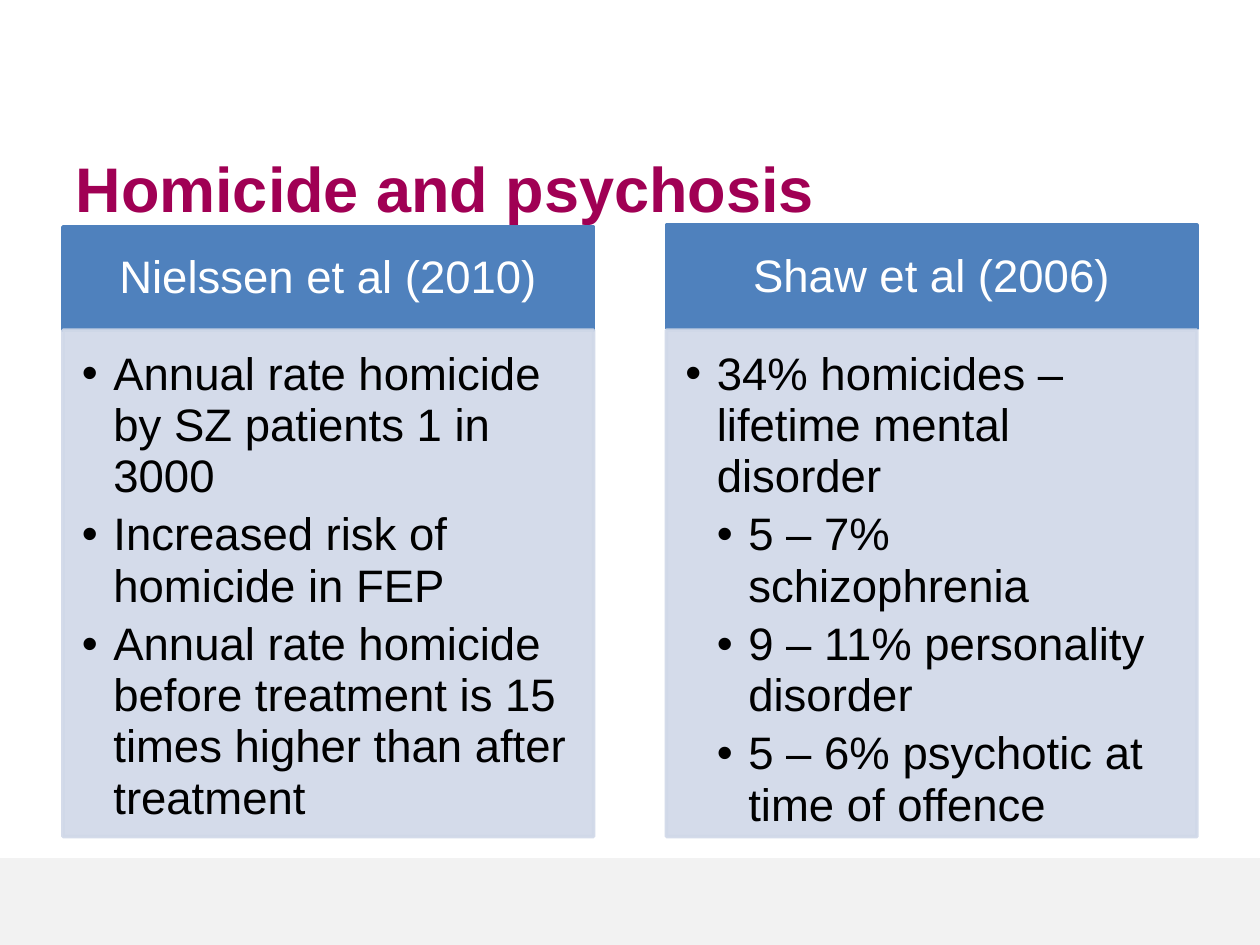
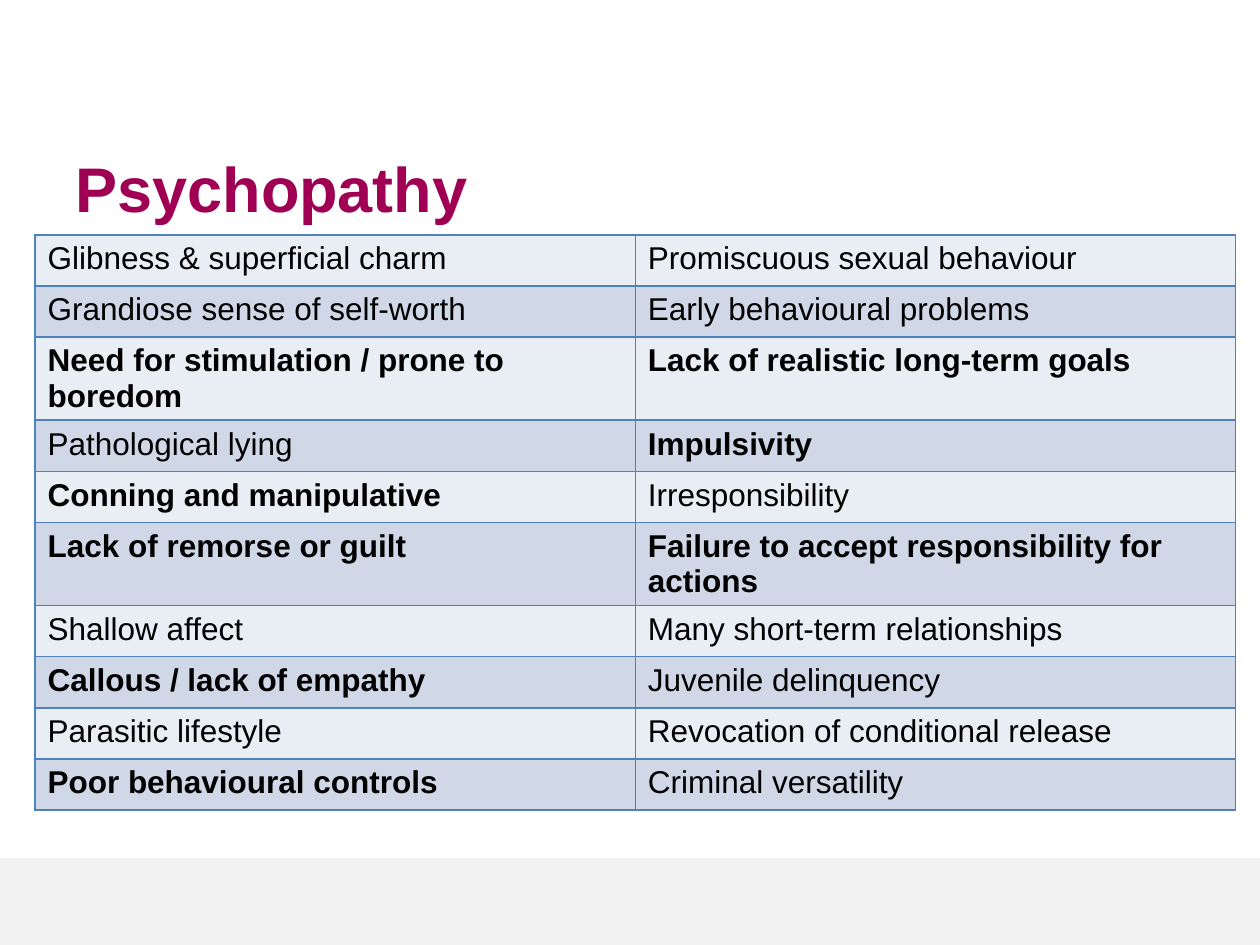
from dataclasses import dataclass

from lxml import etree
from pptx import Presentation
from pptx.dml.color import RGBColor
from pptx.enum.shapes import MSO_SHAPE
from pptx.enum.text import MSO_ANCHOR, MSO_AUTO_SIZE, PP_ALIGN
from pptx.oxml.ns import qn
from pptx.util import Pt

RECT = MSO_SHAPE.RECTANGLE
TOP, MIDDLE = MSO_ANCHOR.TOP, MSO_ANCHOR.MIDDLE
NO_FIT = MSO_AUTO_SIZE.NONE
LEFT, CENTER = PP_ALIGN.LEFT, PP_ALIGN.CENTER

FONT = "Arial"
PLUM, BLUE, PALE, LIGHT = "A00054", "4F81BD", "D0D8E8", "E9EDF4"
GREY, WHITE, BLACK = "F2F2F2", "FFFFFF", "000000"
WIDE, HIGH = 720, 540
COL_W = 303.2
ROW_H = 29.2


@dataclass
class Point:
    text: str
    level: int = 0


@dataclass
class Study:
    name: str
    left: float
    top: float
    points: list[Point]


@dataclass
class Trait:
    text: str
    bold: bool = False


STUDIES = [
    Study("Nielssen et al (2010)", 36, 129.7, [
        Point("Annual rate homicide by SZ patients 1 in 3000"),
        Point("Increased risk of homicide in FEP"),
        Point("Annual rate homicide before treatment is 15 times higher than after treatment"),
    ]),
    Study("Shaw et al (2006)", 380.8, 128.7, [
        Point("34% homicides – lifetime mental disorder"),
        Point("5 – 7% schizophrenia", 1),
        Point("9 – 11% personality disorder", 1),
        Point("5 – 6% psychotic at time of offence", 1),
    ]),
]

TRAITS = [
    (Trait("Glibness & superficial charm"), Trait("Promiscuous sexual behaviour")),
    (Trait("Grandiose sense of self-worth"), Trait("Early behavioural problems")),
    (Trait("Need for stimulation / prone to boredom", True),
     Trait("Lack of realistic long-term goals", True)),
    (Trait("Pathological lying"), Trait("Impulsivity", True)),
    (Trait("Conning and manipulative", True), Trait("Irresponsibility")),
    (Trait("Lack of remorse or guilt", True),
     Trait("Failure to accept responsibility for actions", True)),
    (Trait("Shallow affect"), Trait("Many short-term relationships")),
    (Trait("Callous / lack of empathy", True), Trait("Juvenile delinquency")),
    (Trait("Parasitic lifestyle"), Trait("Revocation of conditional release")),
    (Trait("Poor behavioural controls", True), Trait("Criminal versatility")),
]


def paint(fmt, color: str) -> None:
    fmt.solid()
    fmt.fore_color.rgb = RGBColor.from_string(color)


def style(para, size: float, color: str, bold: bool = False) -> None:
    font = para.font
    font.name, font.size, font.bold = FONT, Pt(size), bold
    font.color.rgb = RGBColor.from_string(color)


def place(shape, left: float, top: float, width: float, height: float) -> None:
    shape.left, shape.top = Pt(left), Pt(top)
    shape.width, shape.height = Pt(width), Pt(height)


def setup(shape, anchor, insets: tuple[float, float, float, float]):
    frame = shape.text_frame
    frame.word_wrap, frame.auto_size = True, NO_FIT
    frame.vertical_anchor = anchor
    (frame.margin_left, frame.margin_top,
     frame.margin_right, frame.margin_bottom) = map(Pt, insets)
    return frame


def space(para, line: float, after: float) -> None:
    para.line_spacing = line
    para.space_before, para.space_after = Pt(0), Pt(after)


def bullet(para, level: int) -> None:
    para.level = level
    props = para._p.get_or_add_pPr()
    props.set("marL", str(Pt(18 * (level + 1))))
    props.set("indent", str(-Pt(18)))
    etree.SubElement(props, qn("a:buFont")).set("typeface", FONT)
    etree.SubElement(props, qn("a:buChar")).set("char", "•")


def panel(shape, color: str) -> None:
    paint(shape.fill, color)
    paint(shape.line.fill, color)
    shape.line.width = Pt(2)


def fade(shape, share: int) -> None:
    for node in list(shape._element.spPr.iter(qn("a:srgbClr"))):
        etree.SubElement(node, qn("a:alpha")).set("val", str(share * 1000))


def frame_cell(cell, color: str) -> None:
    props = cell._tc.get_or_add_tcPr()
    for side in ("lnL", "lnR", "lnT", "lnB"):
        line = etree.SubElement(props, qn(f"a:{side}"), w=str(Pt(1)))
        fill = etree.SubElement(line, qn("a:solidFill"))
        etree.SubElement(fill, qn("a:srgbClr")).set("val", color)


def add_slide(deck, layout: int, title: str):
    slide = deck.slides.add_slide(deck.slide_layouts[layout])
    shape = slide.shapes.title
    place(shape, 36, 80.6, 612, 53.3)
    frame = setup(shape, MIDDLE, (7.2, 3.6, 7.2, 3.6))
    frame.text = title
    para = frame.paragraphs[0]
    para.alignment = LEFT
    style(para, 36, PLUM, True)
    return slide


def add_band(deck, slide) -> None:
    band = slide.shapes.add_shape(RECT, Pt(0), Pt(490.3), Pt(WIDE), Pt(HIGH - 490.3))
    band.shadow.inherit = False
    paint(band.fill, GREY)
    band.line.fill.background()
    deck.slide_master.shapes._spTree.insert(2, band._element)


def draw_study(head, body, study: Study) -> None:
    place(head, study.left, study.top, COL_W, 59)
    panel(head, BLUE)
    frame = setup(head, MIDDLE, (14.4, 8.6, 14.4, 8.6))
    frame.text = study.name
    para = frame.paragraphs[0]
    para.alignment = CENTER
    space(para, 0.94, 0)
    style(para, 26, WHITE)

    place(body, study.left, 188.7, COL_W, 289.4)
    panel(body, PALE)
    fade(body, 90)
    frame = setup(body, TOP, (10.8, 10.8, 14.4, 16.6))
    frame.text = "\n".join(point.text for point in study.points)
    for para, point in zip(frame.paragraphs, study.points):
        bullet(para, point.level)
        space(para, 0.94, 3.9)
        style(para, 26, BLACK)


def draw_traits(slide) -> None:
    table = slide.shapes.add_table(
        len(TRAITS), 2, Pt(20), Pt(134.2), Pt(686), Pt(ROW_H * len(TRAITS))).table
    table.first_row = table.horz_banding = False
    for row, pair in enumerate(TRAITS):
        table.rows[row].height = Pt(ROW_H)
        for col, trait in enumerate(pair):
            cell = table.cell(row, col)
            frame_cell(cell, BLUE)
            paint(cell.fill, PALE if row % 2 else LIGHT)
            cell.text = trait.text
            style(cell.text_frame.paragraphs[0], 18, BLACK, trait.bold)


def main() -> None:
    deck = Presentation()
    deck.slide_width, deck.slide_height = Pt(WIDE), Pt(HIGH)

    slide = add_slide(deck, 4, "Homicide and psychosis")
    add_band(deck, slide)
    slots = list(slide.placeholders)[1:]
    for head, body, study in zip(slots[::2], slots[1::2], STUDIES):
        draw_study(head, body, study)

    draw_traits(add_slide(deck, 5, "Psychopathy"))
    deck.save("out.pptx")


if __name__ == "__main__":
    main()
